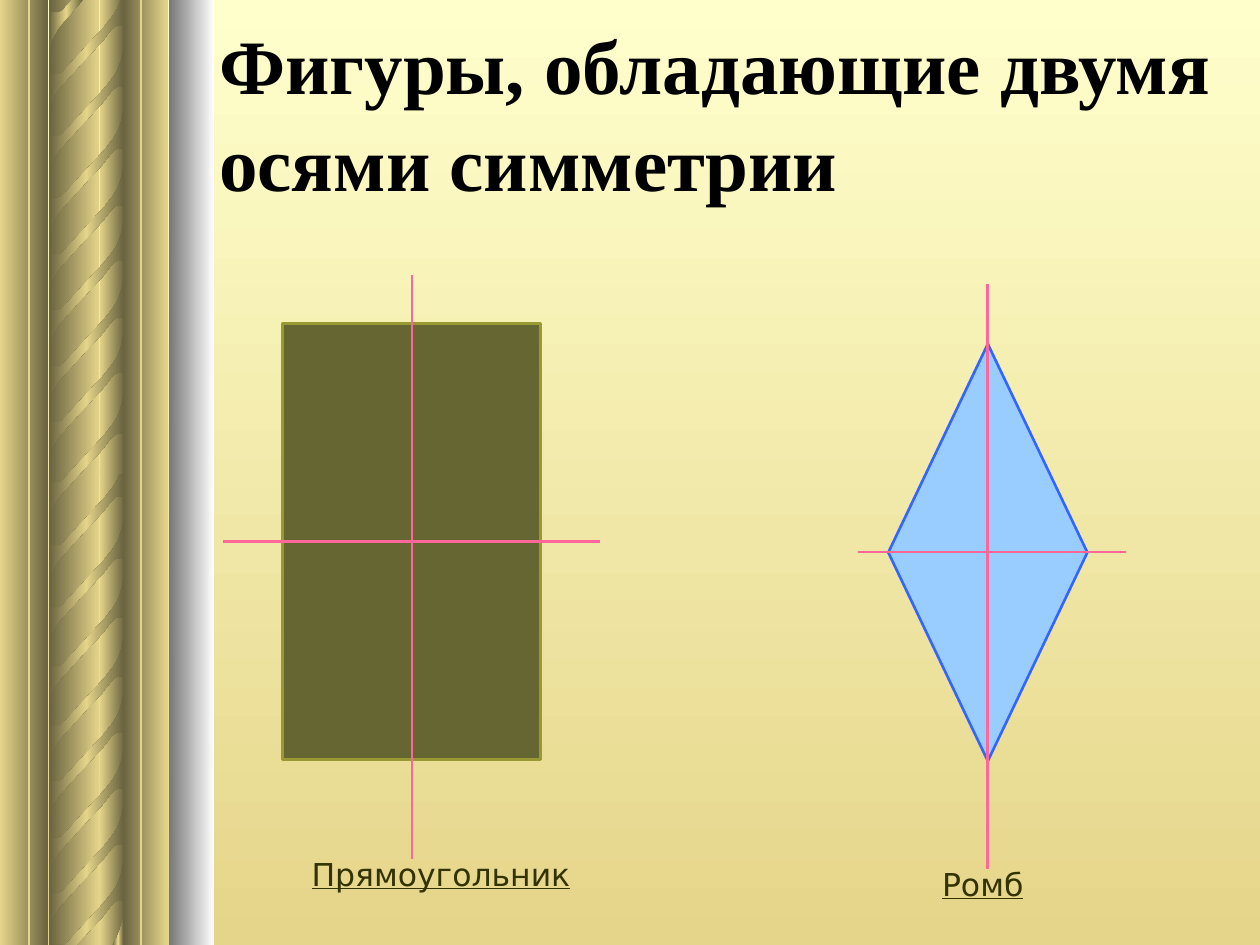
from copy import deepcopy
from dataclasses import dataclass

from lxml.etree import SubElement
from pptx import Presentation
from pptx.dml.color import RGBColor
from pptx.enum.shapes import MSO_CONNECTOR, MSO_SHAPE
from pptx.enum.text import MSO_ANCHOR, MSO_AUTO_SIZE, PP_ALIGN
from pptx.oxml.ns import qn
from pptx.util import Inches, Pt

# Grid of 100 columns by 75 rows over the slide
COLUMNS, ROWS = 100, 75
CELL = Inches(10) // COLUMNS

SAND, SHADE, CREAM = "E5D58A", "6A6340", "FFFFCC"
AXIS_COLOR = "FF6699"


@dataclass(frozen=True)
class Area:
    col: float
    row: float
    cols: float
    rows: float

    def emu(self) -> tuple:
        return tuple(cells(n) for n in (self.col, self.row, self.cols, self.rows))


@dataclass(frozen=True)
class Figure:
    outline: MSO_SHAPE
    area: Area
    fill: str
    border: str
    vertical_axis: tuple  # column, first row, last row
    horizontal_axis: tuple  # row, first column, last column
    caption: str
    caption_area: Area


@dataclass(frozen=True)
class Section:
    top: float
    rows: float
    clip_top: float
    twist_tops: tuple


FIGURES = (
    Figure(MSO_SHAPE.DIAMOND, Area(70.5, 27.3, 15.8, 33.1), "99CCFF", "3366FF",
           (78.4, 22.5, 69), (43.8, 68.1, 89.4), "Ромб", Area(64.2, 68.2, 27.6, 4)),
    Figure(MSO_SHAPE.RECTANGLE, Area(22.4, 25.7, 20.5, 34.6), "666633", "999933",
           (32.7, 21.8, 68.2), (43, 17.7, 47.6), "Прямоугольник", Area(21.6, 67.4, 26.8, 4)),
)

# Column strips: first column, width, left and right colour
STRIPS = ((7.9, 2, SAND, SHADE), (0, 3.8, SAND, SHADE),
          (3.9, 4, SHADE, SAND), (9.8, 3.5, SHADE, SAND))
SECTIONS = (
    Section(37.3, 37.7, 37.3, (45.8, 50.5, 54.9, 59.4, 63.8, 68.3, 41.1, 36.2, 72.5)),
    Section(0, 37.6, 0, (8.6, 13.1, 17.5, 22, 26.4, 3.7, -1.2, -6.1, 31.2)),
)
# One turn of the twisted column, rows counted from its top
TWIST = ((9.8, 0.9), (9.8, 3.3), (9.7, 3.2), (9.3, 3.2), (9.1, 3.3), (8.8, 3.6),
         (8.1, 4.5), (6.4, 6.3), (4.7, 8.2), (4.4, 8.7), (4.1, 9.3), (4, 10.1),
         (3.9, 11.2), (3.9, 6.3), (3.9, 6.8), (4, 7), (4.2, 7.1), (4.4, 7.1),
         (4.6, 7.1), (4.9, 7), (8.3, 3.3), (9, 2.4), (9.3, 1.9), (9.5, 1.4),
         (9.7, 0.7), (9.8, 0), (9.8, 2))


def cells(count: float) -> int:
    return round(count * CELL)


def color(value: str) -> RGBColor:
    return RGBColor.from_string(value)


def set_gradient(fill, owner, colors: tuple, angle: int = 0) -> None:
    fill.gradient()
    fill.gradient_angle = angle
    stop_list = next(owner.iter(qn("a:gsLst")))
    for _ in colors[2:]:
        stop_list.append(deepcopy(stop_list[0]))
    for index, (stop, value) in enumerate(zip(fill.gradient_stops, colors)):
        stop.color.rgb = color(value)
        stop.position = index / (len(colors) - 1)


def add_strip(shapes, area: Area, colors: tuple) -> None:
    strip = shapes.add_shape(MSO_SHAPE.RECTANGLE, *area.emu())
    strip.shadow.inherit = False
    strip.line.fill.background()
    set_gradient(strip.fill, strip.element, colors)


def add_line(shapes, start: tuple, end: tuple, value: str, width: float) -> None:
    line = shapes.add_connector(MSO_CONNECTOR.STRAIGHT, *map(cells, start + end))
    line.line.color.rgb = color(value)
    line.line.width = Pt(width)
    SubElement(line.element.spPr, qn("a:effectLst"))


def clip(points: list, limit: float, side: int) -> list:
    """Keep the part below (side 1) or above (side -1) the row limit."""
    kept = []
    for (x1, y1), (x2, y2) in zip(points[-1:] + points[:-1], points):
        inside_before, inside = (y1 - limit) * side >= 0, (y2 - limit) * side >= 0
        if inside_before != inside:
            kept.append((x1 + (x2 - x1) * (limit - y1) / (y2 - y1), limit))
        if inside:
            kept.append((x2, y2))
    return kept


def add_twist(shapes, top: float, clip_top: float) -> None:
    points = [(x, top + y) for x, y in TWIST]
    points = clip(clip(points, clip_top, 1), ROWS, -1)
    corners = [(cells(x), cells(y)) for x, y in points]
    builder = shapes.build_freeform(*corners[0], scale=1.0)
    builder.add_line_segments(corners[1:], close=True)
    twist = builder.convert_to_shape()
    twist.shadow.inherit = False
    twist.line.fill.background()
    set_gradient(twist.fill, twist.element, (SHADE, SAND, SHADE))


def add_column(shapes) -> None:
    for section in SECTIONS:
        for col, width, left, right in STRIPS:
            add_strip(shapes, Area(col, section.top, width, section.rows), (left, right))
        for top in section.twist_tops:
            add_twist(shapes, top, section.clip_top)
    add_strip(shapes, Area(13.4, 0, 3.6, ROWS), ("767676", "FFFFFF"))
    for col in (2.3, 11.2):
        add_line(shapes, (col, 0), (col, ROWS), SAND, 1)


def write(paragraph, text: str, font_name: str, size: int, value: str):
    run = paragraph.add_run()
    run.text = text
    run.font.name = font_name
    run.font.size = Pt(size)
    run.font.color.rgb = color(value)
    return run


def add_figure(shapes, figure: Figure) -> None:
    outline = shapes.add_shape(figure.outline, *figure.area.emu())
    outline.shadow.inherit = False
    outline.fill.solid()
    outline.fill.fore_color.rgb = color(figure.fill)
    outline.line.color.rgb = color(figure.border)
    outline.line.width = Pt(1.5)

    col, top, bottom = figure.vertical_axis
    add_line(shapes, (col, top), (col, bottom), AXIS_COLOR, 1.5)
    row, left, right = figure.horizontal_axis
    add_line(shapes, (left, row), (right, row), AXIS_COLOR, 1.5)

    caption = shapes.add_textbox(*figure.caption_area.emu()).text_frame
    caption.word_wrap = True
    caption.auto_size = MSO_AUTO_SIZE.SHAPE_TO_FIT_TEXT
    caption.paragraphs[0].alignment = PP_ALIGN.CENTER
    write(caption.paragraphs[0], figure.caption, "DejaVu Sans", 18, "333300").font.underline = True


def main() -> None:
    deck = Presentation()
    deck.slide_width, deck.slide_height = cells(COLUMNS), cells(ROWS)
    slide = deck.slides.add_slide(deck.slide_layouts[5])
    set_gradient(slide.background.fill, slide.element, (CREAM, SAND), 270)

    # Decorative column on the left
    add_column(slide.shapes.add_group_shape().shapes)

    # Title, in front of the column
    title = slide.shapes.title
    slide.shapes.element.append(title.element)
    title.left, title.top, title.width, title.height = Area(16.4, 2.5, 81.9, 12.5).emu()
    heading = title.text_frame
    heading.word_wrap = True
    heading.auto_size = MSO_AUTO_SIZE.NONE
    heading.vertical_anchor = MSO_ANCHOR.MIDDLE
    heading.paragraphs[0].alignment = PP_ALIGN.LEFT
    heading.paragraphs[0].line_spacing = 1.05
    write(heading.paragraphs[0], "Фигуры, обладающие двумя осями симметрии",
          "Times New Roman", 44, "000000").font.bold = True

    # Figures with their axes of symmetry
    for figure in FIGURES:
        add_figure(slide.shapes, figure)

    deck.save("out.pptx")


if __name__ == "__main__":
    main()
